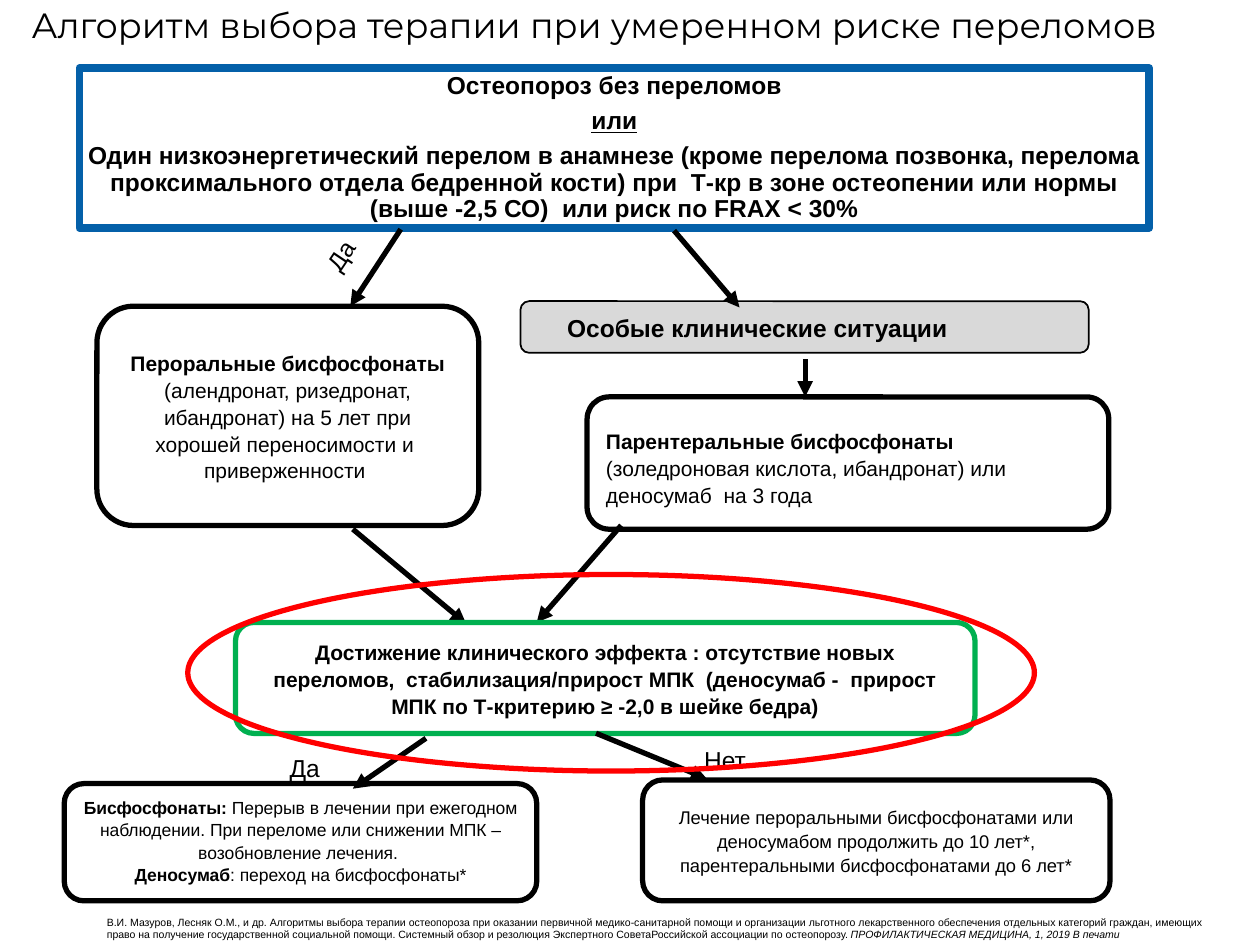
from collections import namedtuple

from lxml import etree
from pptx import Presentation
from pptx.dml.color import RGBColor
from pptx.enum.shapes import MSO_CONNECTOR, MSO_SHAPE
from pptx.enum.text import MSO_ANCHOR, MSO_AUTO_SIZE, PP_ALIGN
from pptx.oxml.ns import qn
from pptx.util import Pt

RECTANGLE, ROUNDED, ELLIPSE = MSO_SHAPE.RECTANGLE, MSO_SHAPE.ROUNDED_RECTANGLE, MSO_SHAPE.OVAL
STRAIGHT = MSO_CONNECTOR.STRAIGHT
LEFT, CENTER = PP_ALIGN.LEFT, PP_ALIGN.CENTER
TOP, MIDDLE = MSO_ANCHOR.TOP, MSO_ANCHOR.MIDDLE
NO_AUTOFIT = MSO_AUTO_SIZE.NONE

BLACK = RGBColor(0x00, 0x00, 0x00)
WHITE = RGBColor(0xFF, 0xFF, 0xFF)
GRAY = RGBColor(0xD9, 0xD9, 0xD9)
BLUE = RGBColor(0x04, 0x60, 0xA9)
GREEN = RGBColor(0x00, 0xB0, 0x50)
RED = RGBColor(0xFF, 0x00, 0x00)

BOLD = {"bold": True}
Box = namedtuple("Box", "left top width height")


def set_attributes(target, values):
    """Set every attribute in a dict of format values."""
    for attribute, value in values.items():
        setattr(target, attribute, value)


def inner(box, left, top, width, height):
    """Return a box placed relative to the corner of another box."""
    return Box(box.left + left, box.top + top, width, height)


def write(frame, paragraphs, size, align=LEFT, spacing=1.0, after=0, font="Arial"):
    """Fill a text frame with paragraphs, each a list of (text, format) runs."""
    for index, runs in enumerate(paragraphs):
        paragraph = frame.paragraphs[0] if index == 0 else frame.add_paragraph()
        set_attributes(paragraph, {"alignment": align, "line_spacing": spacing,
                                   "space_after": Pt(after)})
        for text, style in runs:
            run = paragraph.add_run()
            run.text = text
            set_attributes(run.font, {"name": font, "size": Pt(size), "bold": False, **style})
            run.font.color.rgb = BLACK


def add_panel(slide, box, kind=ROUNDED, line=BLACK, weight=3, fill=WHITE):
    """Add an outlined shape and return it."""
    panel = slide.shapes.add_shape(kind, *map(Pt, box))
    panel.shadow.inherit = False
    if fill is None:
        panel.fill.background()
    else:
        panel.fill.solid()
        panel.fill.fore_color.rgb = fill
    panel.line.color.rgb = line
    panel.line.width = Pt(weight)
    set_attributes(panel.text_frame, {"word_wrap": True, "vertical_anchor": MIDDLE})
    return panel


def add_arrow(slide, box, start, end):
    """Add a black arrow between two points relative to a box."""
    points = [Pt(origin + shift) for point in (start, end)
              for origin, shift in zip((box.left, box.top), point)]
    arrow = slide.shapes.add_connector(STRAIGHT, *points)
    arrow.line.color.rgb = BLACK
    arrow.line.width = Pt(3)
    etree.SubElement(arrow.line._get_or_add_ln(), qn("a:tailEnd"), type="triangle")
    etree.SubElement(arrow._element.spPr, qn("a:effectLst"))


def add_text(slide, box, paragraphs, size, rotation=0):
    """Add a plain text box."""
    area = slide.shapes.add_textbox(*map(Pt, box))
    area.rotation = rotation
    area.text_frame.word_wrap = True
    write(area.text_frame, paragraphs, size)


def add_title(slide, box):
    """Place and format the slide title."""
    title = slide.shapes.title
    set_attributes(title, dict(zip(Box._fields, map(Pt, box))))
    set_attributes(title.text_frame, {
        "margin_left": 0, "margin_right": 0, "margin_top": 0, "margin_bottom": 0,
        "vertical_anchor": TOP, "word_wrap": True, "auto_size": NO_AUTOFIT})
    write(title.text_frame, [[("Алгоритм выбора терапии при умеренном риске переломов", {})]],
          20, spacing=0.95, font="Montserrat")


def add_criteria(slide, box):
    """Add the entry criteria at the top of the algorithm."""
    frame = add_panel(slide, box, RECTANGLE, BLUE, 4.5).text_frame
    set_attributes(frame, dict.fromkeys(
        ("margin_left", "margin_right", "margin_top", "margin_bottom"), Pt(0.7)))
    write(frame, [
        [("Остеопороз без переломов", BOLD)],
        [("или", {"bold": True, "underline": True})],
        [("Один низкоэнергетический перелом в анамнезе (кроме перелома позвонка, "
          "перелома проксимального отдела бедренной кости) при  Т-кр в зоне остеопении "
          "или нормы (выше -2,5 СО)  или риск по FRAX < 30%", BOLD)],
    ], 14, CENTER, 0.9, 5)


def add_oral_branch(slide, box):
    """Add the oral therapy branch with its arrows and label."""
    oral = add_panel(slide, inner(box, 0, 44, box.width, 125.3))
    write(oral.text_frame, [[
        ("Пероральные бисфосфонаты ", BOLD),
        ("(алендронат, ризедронат, ибандронат) на 5 лет при хорошей переносимости и  "
         "приверженности ", {})]], 12, CENTER, 1.07)
    add_arrow(slide, box, (173.6, 0), (144.8, 44))
    add_arrow(slide, box, (146.2, 171.4), (211, 225.4))
    add_text(slide, inner(box, 122.6, 0.8, 36, 24.5), [[("Да", {})]], 14, 303.8)


def add_parenteral_branch(slide, box):
    """Add the special situations branch with its arrows."""
    situations = add_panel(slide, inner(box, 0, 40.3, 324.7, 29.5), weight=1, fill=GRAY)
    situations.text_frame.margin_left = Pt(25.2)
    write(situations.text_frame, [[("Особые клинические ситуации", BOLD)]], 14, spacing=1.07)
    parenteral = add_panel(slide, inner(box, 38.1, 95, 298.1, 75.6))
    parenteral.text_frame.margin_top = Pt(8)
    write(parenteral.text_frame, [[
        ("Парентеральные бисфосфонаты ", BOLD),
        ("(золедроновая кислота, ибандронат) или деносумаб  на 3 года", {})]],
        12, spacing=1.07)
    add_arrow(slide, box, (87.8, 0), (125.2, 43.9))
    add_arrow(slide, box, (162.7, 73.4), (162.7, 95))
    add_arrow(slide, box, (57.6, 168.4), (9.3, 223.9))


def add_goal(slide, box):
    """Add the treatment goal."""
    goal = add_panel(slide, box, line=GREEN)
    write(goal.text_frame, [[
        ("Достижение клинического эффекта : отсутствие новых переломов,  "
         "стабилизация/прирост МПК  (деносумаб -  прирост МПК по Т-критерию ≥ -2,0 "
         "в шейке бедра)", BOLD)]], 12, CENTER, 1.07)


def add_follow_up(slide, box):
    """Add the two outcomes with their arrows and labels."""
    pause = add_panel(slide, inner(box, 0, 28.8, 270, 67))
    pause.text_frame.vertical_anchor = TOP
    write(pause.text_frame, [
        [("Бисфосфонаты:", BOLD),
         (" Перерыв в лечении при ежегодном наблюдении. При переломе или снижении МПК – "
          "возобновление лечения. ", {})],
        [("Деносумаб", BOLD), (": переход на бисфосфонаты*", {})],
    ], 10, CENTER, 1.07)
    extension = add_panel(slide, inner(box, 330.5, 26.7, 267.1, 69.1))
    write(extension.text_frame, [[
        ("Лечение пероральными бисфосфонатами или деносумабом продолжить до 10 лет*, "
         "парентеральными бисфосфонатами до 6 лет*", {})]], 10.5, CENTER, 1.07)
    add_arrow(slide, box, (206.7, 2.9), (164.9, 31.7))
    add_arrow(slide, box, (303.9, 0), (367.2, 26))
    add_text(slide, inner(box, 121.7, 8, 36, 24.5), [[("Да", {})]], 14)
    add_text(slide, inner(box, 358.6, 3, 49.7, 24.5), [[("Нет", {})]], 14)


def add_citation(slide, box):
    """Add the source reference at the foot of the slide."""
    add_text(slide, box, [[
        ("В.И. Мазуров, Лесняк О.М., и др. Алгоритмы выбора терапии остеопороза при оказании "
         "первичной медико-санитарной помощи и организации льготного лекарственного "
         "обеспечения отдельных категорий граждан, имеющих право на получение "
         "государственной социальной помощи. Системный обзор и резолюция Экспертного "
         "СоветаРоссийской ассоциации по остеопорозу. ", {}),
        ("ПРОФИЛАКТИЧЕСКАЯ МЕДИЦИНА, 1, 2019 В печати", {"italic": True})]], 6)


def main():
    """Build the slide and save it."""
    presentation = Presentation()
    set_attributes(presentation, {"slide_width": Pt(720), "slide_height": Pt(540)})
    slide = presentation.slides.add_slide(presentation.slide_layouts[5])
    add_title(slide, Box(18, 3.6, 689, 34.6))
    add_criteria(slide, Box(45.4, 38.9, 611.3, 91.4))
    add_oral_branch(slide, Box(55.4, 131, 218.2, 225.4))
    add_parenteral_branch(slide, Box(297.4, 131.8, 336.2, 223.9))
    add_goal(slide, Box(134.6, 355.7, 422.6, 63.4))
    add_follow_up(slide, Box(36.7, 419, 597.6, 95.8))
    add_citation(slide, Box(54, 519.8, 643.7, 20))
    add_panel(slide, Box(107.3, 328.3, 483.8, 112.3), ELLIPSE, RED, fill=None)
    presentation.save("out.pptx")


if __name__ == "__main__":
    main()
